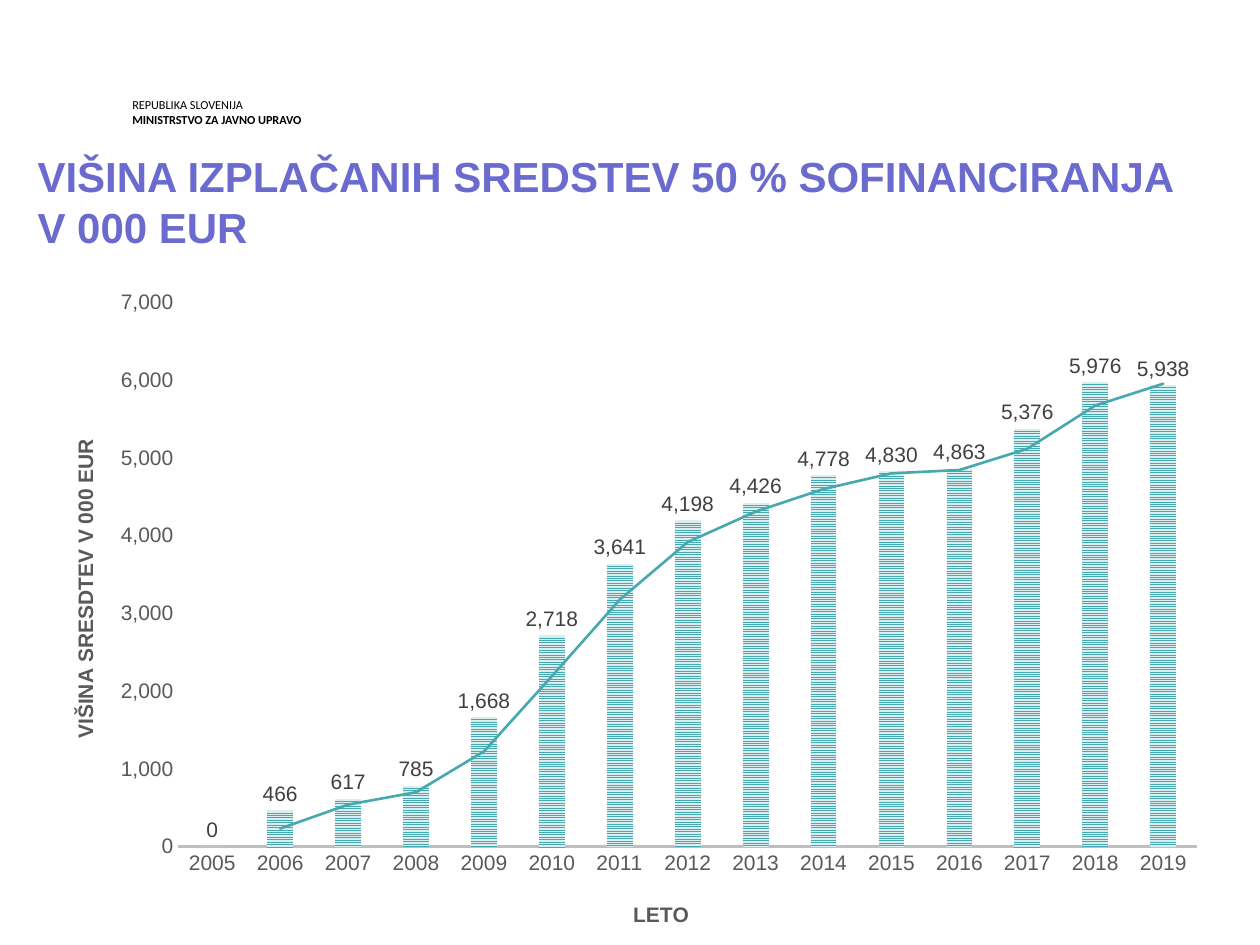
from dataclasses import dataclass

from lxml.etree import _Element
from pptx import Presentation
from pptx.chart.data import CategoryChartData
from pptx.dml.color import RGBColor
from pptx.enum.chart import XL_CHART_TYPE, XL_LABEL_POSITION, XL_TICK_MARK
from pptx.enum.dml import MSO_PATTERN
from pptx.enum.text import MSO_ANCHOR
from pptx.oxml import parse_xml
from pptx.oxml.ns import nsdecls, qn
from pptx.util import Emu, Inches, Pt

SLIDE_WIDTH, SLIDE_HEIGHT = Inches(10), Inches(7.5)
FIRST_YEAR = 2005
PAID_FUNDS = (0, 466, 617, 785, 1668, 2718, 3641, 4198,
              4426, 4778, 4830, 4863, 5376, 5976, 5938)


@dataclass(frozen=True)
class Theme:
    black: str = "000000"
    heading: str = "6B6BCF"
    teal: str = "48A8B0"
    pale_teal: str = "DAEEF0"
    axis_text: str = "595959"
    axis_line: str = "BFBFBF"
    label_text: str = "404040"
    header_size: float = 7
    heading_size: float = 24
    chart_size: float = 12
    body_font: str = "Arial"
    header_font: str = "Calibri"


@dataclass(frozen=True)
class Area:
    """A rectangle in shares of its container."""
    left: float
    top: float
    width: float = 0
    height: float = 0

    def on_slide(self) -> tuple[Emu, Emu, Emu, Emu]:
        return (Emu(int(self.left * SLIDE_WIDTH)), Emu(int(self.top * SLIDE_HEIGHT)),
                Emu(int(self.width * SLIDE_WIDTH)), Emu(int(self.height * SLIDE_HEIGHT)))


@dataclass(frozen=True)
class Line:
    text: str
    bold: bool = False


THEME = Theme()


def style_font(font, size: float, color: str, name: str = THEME.body_font,
               bold: bool = False) -> None:
    font.size, font.name, font.bold = Pt(size), name, bold
    font.color.rgb = RGBColor.from_string(color)


def add_text(slide, area: Area, lines: tuple[Line, ...], size: float, color: str,
             font_name: str, line_spacing=None, inset: bool = True) -> None:
    frame = slide.shapes.add_textbox(*area.on_slide()).text_frame
    frame.word_wrap = True
    frame.vertical_anchor = MSO_ANCHOR.TOP
    if not inset:
        frame.margin_left = frame.margin_right = 0
        frame.margin_top = frame.margin_bottom = 0
    for index, line in enumerate(lines):
        paragraph = frame.add_paragraph() if index else frame.paragraphs[0]
        paragraph.line_spacing = line_spacing
        run = paragraph.add_run()
        run.text = line.text
        style_font(run.font, size, color, font_name, line.bold)


def manual_layout(area: Area, inner: bool = False) -> _Element:
    target = '<c:layoutTarget val="inner"/>' if inner else ""
    extent = f'<c:w val="{area.width}"/><c:h val="{area.height}"/>' if inner else ""
    return parse_xml(
        f'<c:layout {nsdecls("c")}><c:manualLayout>{target}'
        f'<c:xMode val="edge"/><c:yMode val="edge"/>'
        f'<c:x val="{area.left}"/><c:y val="{area.top}"/>{extent}'
        f'</c:manualLayout></c:layout>')


def remove_layout(element: _Element) -> None:
    for layout in element.findall(qn("c:layout")):
        element.remove(layout)


def style_axis(axis, title: str, position: Area, rotation: int = 0) -> None:
    axis.has_major_gridlines = False
    axis.major_tick_mark = axis.minor_tick_mark = XL_TICK_MARK.NONE
    style_font(axis.tick_labels.font, THEME.chart_size, THEME.axis_text)
    frame = axis.axis_title.text_frame
    run = frame.paragraphs[0].add_run()
    run.text = title
    style_font(run.font, THEME.chart_size, THEME.axis_text, bold=True)
    element = axis.axis_title._element
    element.find(".//" + qn("a:bodyPr")).set("rot", str(rotation * 60000))
    remove_layout(element)
    element.find(qn("c:tx")).addnext(manual_layout(position))


def add_moving_average(series) -> None:
    trend = parse_xml(
        f'<c:trendline {nsdecls("c", "a")}><c:spPr><a:ln w="{Pt(1.5)}" cap="rnd">'
        f'<a:solidFill><a:srgbClr val="{THEME.teal}"/></a:solidFill></a:ln></c:spPr>'
        '<c:trendlineType val="movingAvg"/><c:period val="2"/>'
        '<c:dispRSqr val="0"/><c:dispEq val="0"/></c:trendline>')
    series._element.find(qn("c:cat")).addprevious(trend)


def add_funds_chart(slide, area: Area) -> None:
    data = CategoryChartData(number_format="#,##0")
    data.categories = [str(FIRST_YEAR + step) for step in range(len(PAID_FUNDS))]
    data.add_series("Series 1", PAID_FUNDS)
    chart = slide.shapes.add_chart(
        XL_CHART_TYPE.COLUMN_CLUSTERED, *area.on_slide(), data).chart
    chart.has_title = chart.has_legend = False
    style_font(chart.font, THEME.chart_size, THEME.black)

    style_axis(chart.category_axis, "LETO", Area(0.5, 0.93))
    axis_line = chart.category_axis.format.line
    axis_line.width = Pt(1.5)
    axis_line.color.rgb = RGBColor.from_string(THEME.axis_line)

    value_axis = chart.value_axis
    style_axis(value_axis, "VIŠINA SRESDTEV V 000 EUR", Area(0.025, 0.235), -90)
    value_axis.minimum_scale, value_axis.maximum_scale = 0, 7000
    value_axis.major_unit = 1000
    value_axis.tick_labels.number_format = "#,##0"
    value_axis.tick_labels.number_format_is_linked = False
    value_axis.format.line.fill.background()

    plot = chart.plots[0]
    plot.gap_width, plot.overlap = 164, -22
    plot.vary_by_categories = False
    series = plot.series[0]
    fill = series.format.fill
    fill.patterned()
    fill.pattern = MSO_PATTERN.NARROW_HORIZONTAL
    fill.fore_color.rgb = RGBColor.from_string(THEME.teal)
    fill.back_color.rgb = RGBColor.from_string(THEME.pale_teal)
    labels = series.data_labels
    labels.show_value = True
    labels.number_format, labels.number_format_is_linked = "#,##0", False
    labels.position = XL_LABEL_POSITION.OUTSIDE_END
    style_font(labels.font, THEME.chart_size, THEME.label_text)
    add_moving_average(series)

    plot_area = chart._chartSpace.find(".//" + qn("c:plotArea"))
    remove_layout(plot_area)
    plot_area.insert(0, manual_layout(Area(0.118, 0.036, 0.863, 0.818), inner=True))


def main() -> None:
    presentation = Presentation()
    presentation.slide_width, presentation.slide_height = SLIDE_WIDTH, SLIDE_HEIGHT
    slide = presentation.slides.add_slide(presentation.slide_layouts[6])
    add_text(slide, Area(0.105, 0.103, 0.212, 0.031),
             (Line("REPUBLIKA SLOVENIJA"), Line("MINISTRSTVO ZA JAVNO UPRAVO", True)),
             THEME.header_size, THEME.black, THEME.header_font, Pt(8.4), inset=False)
    add_text(slide, Area(0.02, 0.153, 0.937, 0.105),
             (Line("VIŠINA IZPLAČANIH SREDSTEV 50 % SOFINANCIRANJA V 000 EUR", True),),
             THEME.heading_size, THEME.heading, THEME.body_font)
    add_funds_chart(slide, Area(0.031, 0.295, 0.937, 0.704))
    presentation.save("out.pptx")


if __name__ == "__main__":
    main()
